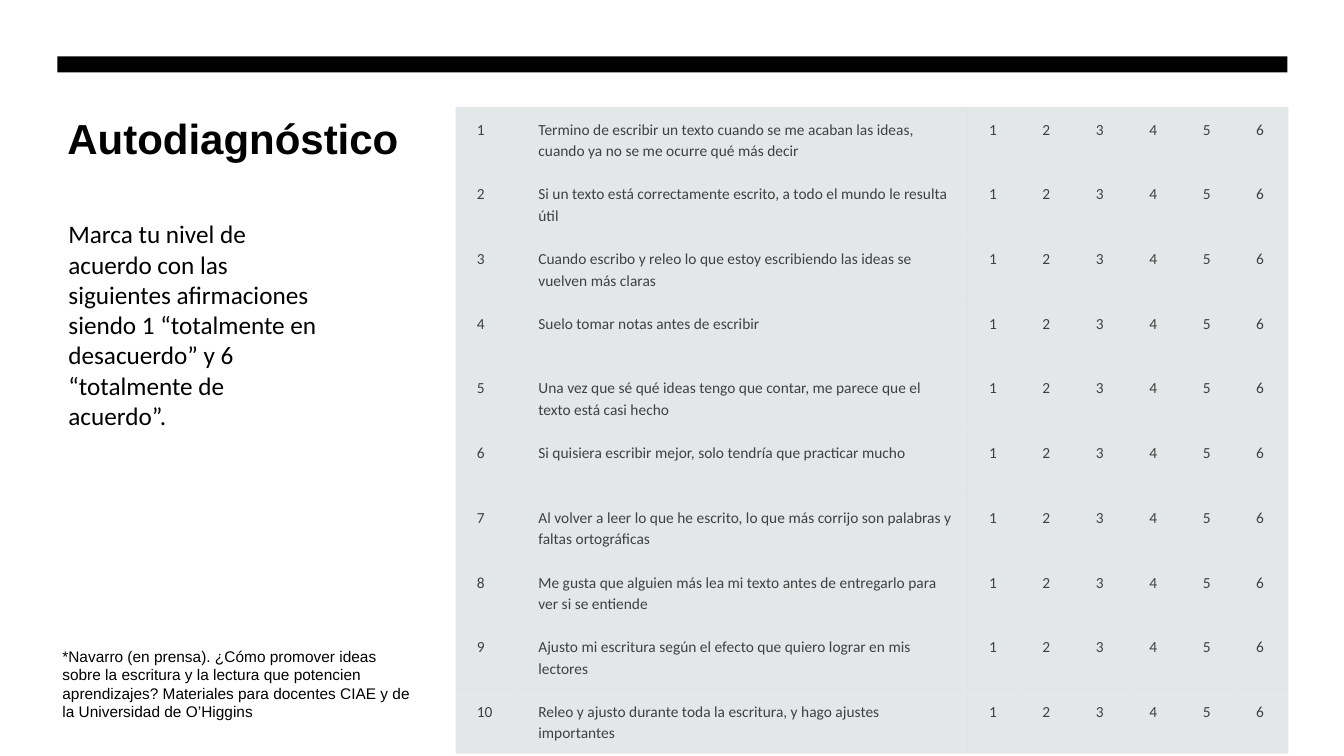
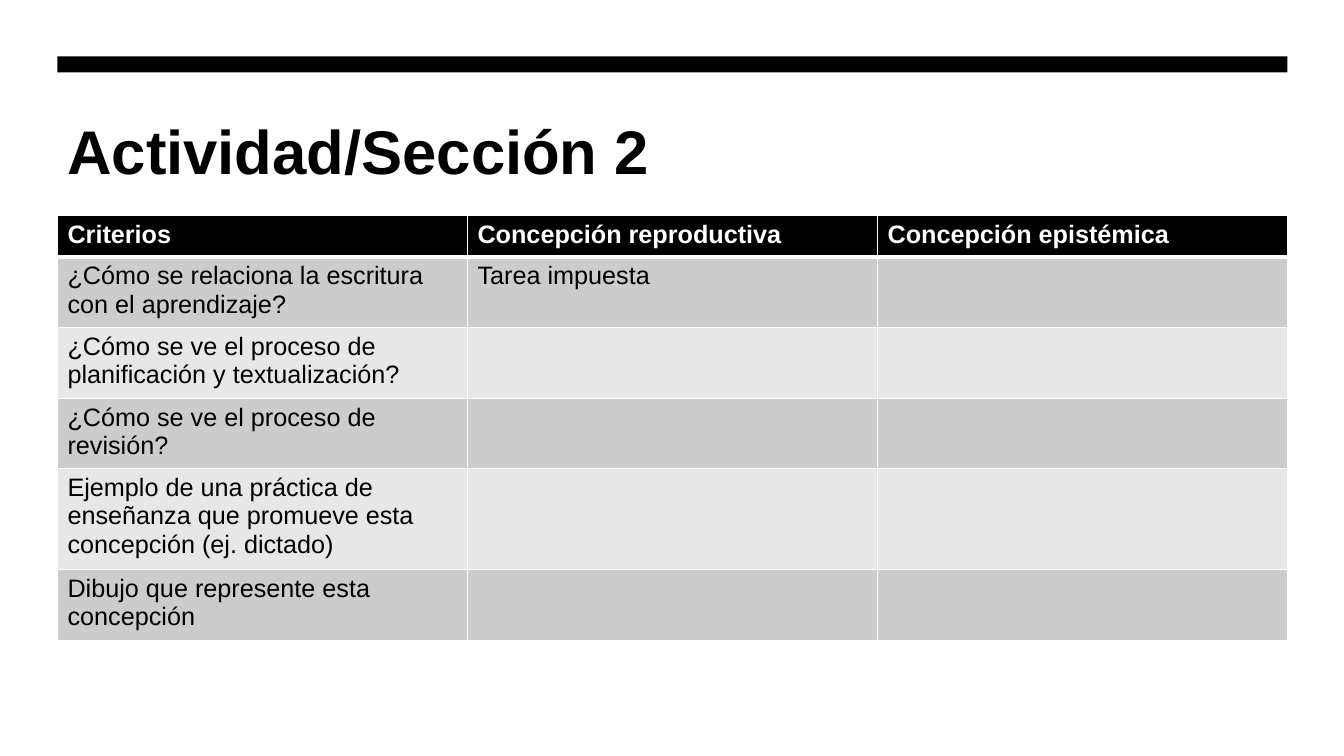
from lxml.etree import SubElement
from pptx import Presentation
from pptx.dml.color import RGBColor
from pptx.enum.shapes import MSO_SHAPE as Shape
from pptx.oxml.ns import qn
from pptx.util import Inches, Pt

SLIDE_WIDTH, SLIDE_HEIGHT = 13.33, 7.5
MARGIN = 0.57
CONTENT_WIDTH = 12.2
TITLE_TOP = 1.07
BLACK, WHITE, GRAY_TEXT = "000000", "FFFFFF", "404040"
SURVEY_FILL, SURVEY_OPACITY = "B4BCBE", 35
BAND_FILLS = ("CCCCCC", "E7E7E7")
HEADING_FONT, BODY_FONT = "Arial", "Calibri"
PLAIN_TABLE_STYLE = "{2D5ABB26-0587-4C30-8999-92F81FD0307C}"

SURVEY_TITLE = "Autodiagnóstico"
INSTRUCTIONS = (
    "Marca tu nivel de acuerdo con las siguientes afirmaciones siendo 1 "
    "“totalmente en desacuerdo” y 6 “totalmente de acuerdo”."
)
CITATION = (
    "*Navarro (en prensa). ¿Cómo promover ideas sobre la escritura y la lectura "
    "que potencien aprendizajes? Materiales para docentes CIAE y de la "
    "Universidad de O’Higgins"
)
STATEMENTS = [
    "Termino de escribir un texto cuando se me acaban las ideas, cuando ya no se me ocurre qué más decir",
    "Si un texto está correctamente escrito, a todo el mundo le resulta útil",
    "Cuando escribo y releo lo que estoy escribiendo las ideas se vuelven más claras",
    "Suelo tomar notas antes de escribir",
    "Una vez que sé qué ideas tengo que contar, me parece que el texto está casi hecho",
    "Si quisiera escribir mejor, solo tendría que practicar mucho",
    "Al volver a leer lo que he escrito, lo que más corrijo son palabras y faltas ortográficas",
    "Me gusta que alguien más lea mi texto antes de entregarlo para ver si se entiende",
    "Ajusto mi escritura según el efecto que quiero lograr en mis lectores",
    "Releo y ajusto durante toda la escritura, y hago ajustes importantes",
]
SCALE = [str(level) for level in range(1, 7)]

ACTIVITY_TITLE = "Actividad/Sección 2"
CRITERIA = [
    ("Criterios", "Concepción reproductiva", "Concepción epistémica"),
    ("¿Cómo se relaciona la escritura con el aprendizaje?", "Tarea impuesta", ""),
    ("¿Cómo se ve el proceso de planificación y textualización?", "", ""),
    ("¿Cómo se ve el proceso de revisión?", "", ""),
    ("Ejemplo de una práctica de enseñanza que promueve esta concepción (ej. dictado)", "", ""),
    ("Dibujo que represente esta concepción", "", ""),
]


def color(value):
    return RGBColor.from_string(value)


def write(text_frame, text, size, font, text_color=BLACK, bold=False):
    text_frame.text = text
    for paragraph in text_frame.paragraphs:
        paragraph.font.size = Pt(size)
        for run in paragraph.runs:
            run.font.size = Pt(size)
            run.font.name = font
            run.font.bold = bold
            run.font.color.rgb = color(text_color)


def add_text(slide, box, text, size, font, bold=False):
    shape = slide.shapes.add_textbox(*map(Inches, box))
    shape.text_frame.word_wrap = True
    write(shape.text_frame, text, size, font, bold=bold)


def add_titled_slide(presentation, title, size, width):
    slide = presentation.slides.add_slide(presentation.slide_layouts[6])
    bar = slide.shapes.add_shape(
        Shape.RECTANGLE, *map(Inches, (MARGIN, 0.56, CONTENT_WIDTH, 0.16)))
    bar.shadow.inherit = False
    bar.fill.solid()
    bar.fill.fore_color.rgb = color(BLACK)
    bar.line.fill.background()
    add_text(slide, (MARGIN, TITLE_TOP, width, 0.9), title, size, HEADING_FONT, True)
    return slide


def add_plain_table(slide, left, top, column_widths, row_height, rows):
    frame = slide.shapes.add_table(
        len(rows), len(column_widths), Inches(left), Inches(top),
        Inches(sum(column_widths)), Inches(row_height * len(rows)))
    table = frame.table
    table.first_row = table.horz_banding = False
    table._tbl.tblPr.find(qn("a:tableStyleId")).text = PLAIN_TABLE_STYLE
    for column, width in zip(table.columns, column_widths):
        column.width = Inches(width)
    for row in table.rows:
        row.height = Inches(row_height)
    return table


def fill_cell(cell, fill, opacity=100):
    cell.fill.solid()
    cell.fill.fore_color.rgb = color(fill)
    if opacity < 100:
        solid = cell._tc.tcPr.find(qn("a:solidFill"))
        SubElement(solid[0], qn("a:alpha"), val=str(opacity * 1000))


def border_cell(cell, widths):
    properties = cell._tc.get_or_add_tcPr()
    for side, width in zip("LRTB", widths):
        line = SubElement(properties, qn(f"a:ln{side}"), w=str(Pt(width)))
        solid = SubElement(line, qn("a:solidFill"))
        SubElement(solid, qn("a:srgbClr"), val=WHITE)


def build_survey(presentation):
    slide = add_titled_slide(presentation, SURVEY_TITLE, 30, 3.72)
    rows = [[str(number), statement, *SCALE]
            for number, statement in enumerate(STATEMENTS, 1)]
    top, bottom = 1.06, 7.48
    widths = [0.61, 4.47] + [0.53] * len(SCALE)
    table = add_plain_table(slide, 4.52, top, widths, (bottom - top) / len(rows), rows)
    for row, texts in zip(table.rows, rows):
        for cell, text in zip(row.cells, texts):
            cell.margin_left = Inches(0.21)
            cell.margin_right = cell.margin_top = Inches(0.11)
            cell.margin_bottom = Inches(0.1)
            write(cell.text_frame, text, 11, BODY_FONT, GRAY_TEXT)
            cell.text_frame.paragraphs[0].line_spacing = Pt(15.4)
            fill_cell(cell, SURVEY_FILL, SURVEY_OPACITY)
    add_text(slide, (0.58, 2.12, 2.68, 2.22), INSTRUCTIONS, 18, BODY_FONT)
    add_text(slide, (0.52, 6.37, 3.72, 0.84), CITATION, 11, HEADING_FONT)


def build_activity(presentation):
    slide = add_titled_slide(presentation, ACTIVITY_TITLE, 44, CONTENT_WIDTH)
    columns = len(CRITERIA[0])
    table = add_plain_table(
        slide, MARGIN, 2.14, [CONTENT_WIDTH / columns] * columns, 0.41, CRITERIA)
    for index, (row, texts) in enumerate(zip(table.rows, CRITERIA)):
        header = index == 0
        for cell, text in zip(row.cells, texts):
            write(cell.text_frame, text, 18, HEADING_FONT, WHITE if header else BLACK, header)
            border_cell(cell, (1, 1, 3 if index == 1 else 1, 3 if header else 1))
            fill_cell(cell, BLACK if header else BAND_FILLS[(index - 1) % 2])


def main():
    presentation = Presentation()
    presentation.slide_width = Inches(SLIDE_WIDTH)
    presentation.slide_height = Inches(SLIDE_HEIGHT)
    build_survey(presentation)
    build_activity(presentation)
    presentation.save("out.pptx")


if __name__ == "__main__":
    main()
